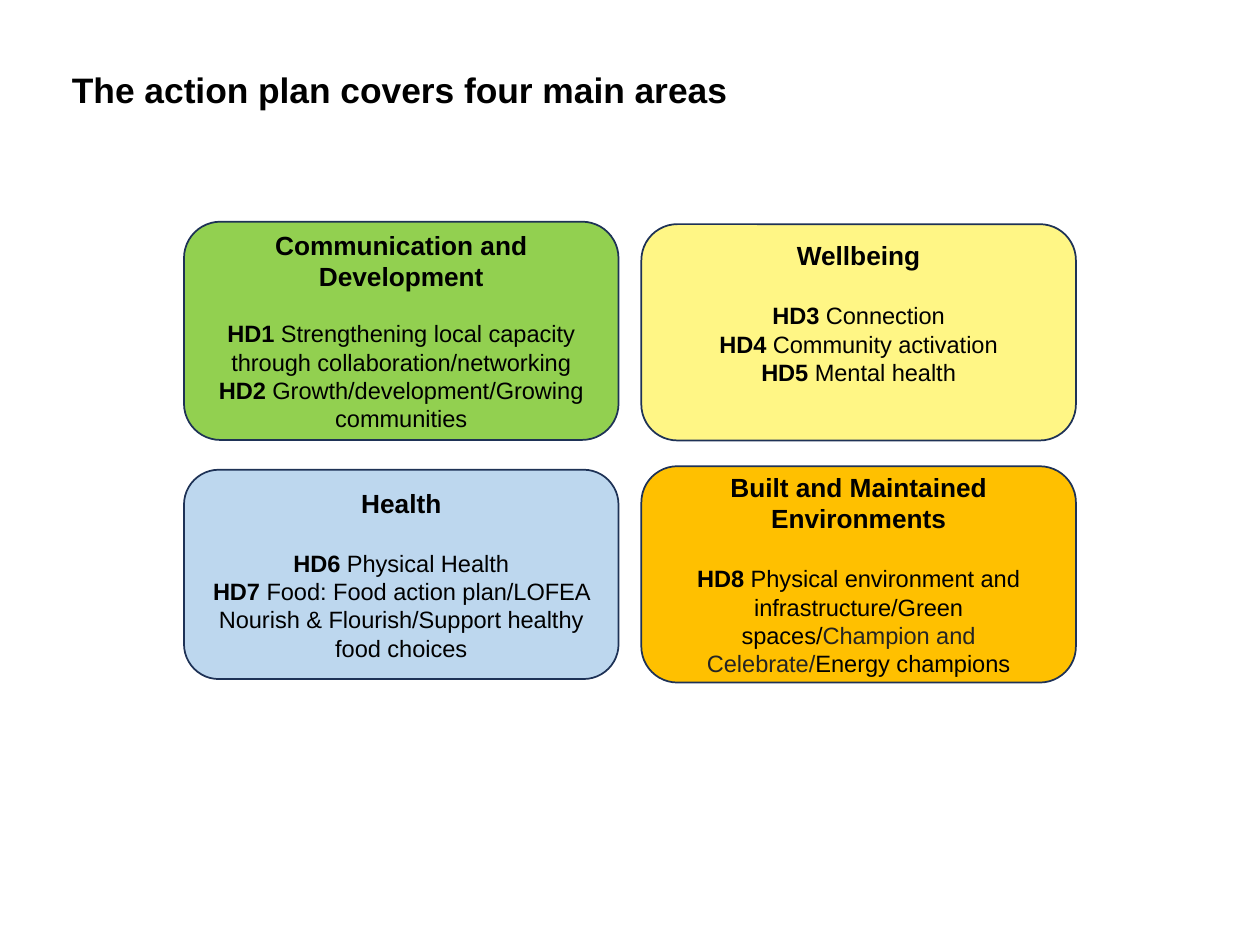
from pptx import Presentation
from pptx.dml.color import RGBColor
from pptx.enum.shapes import MSO_SHAPE as SHAPE
from pptx.enum.text import MSO_ANCHOR as ANCHOR, PP_ALIGN as ALIGN
from pptx.util import Cm, Pt


def rgb(value):
    return RGBColor.from_string(value)


def add_run(p, text, size=13.5, bold=False, color="000000", font="Arial"):
    r = p.add_run()
    r.text = text
    r.font.name = font
    r.font.size = Pt(size)
    r.font.bold = bold
    r.font.color.rgb = rgb(color)


class Deck:
    line = "1E3256"
    title_size = 20.2
    heading_size = 15

    def __init__(self, prs):
        self.s = prs.slides.add_slide(prs.slide_layouts[5])

    def frame(self, sp, anchor):
        tf = sp.text_frame
        tf.word_wrap = True
        tf.vertical_anchor = anchor
        tf.margin_left = tf.margin_right = Cm(0.18)
        tf.margin_top = tf.margin_bottom = Cm(0.1)
        return tf

    def title(self, text, left, top, width, height):
        sp = self.s.shapes.title
        sp.left, sp.top, sp.width, sp.height = map(Cm, (left, top, width, height))
        p = self.frame(sp, ANCHOR.BOTTOM).paragraphs[0]
        p.alignment = ALIGN.LEFT
        p.line_spacing = 0.9
        add_run(p, text, size=self.title_size, bold=True)

    def card(self, heading, items, fill, box, gap=17.25, anchor=ANCHOR.MIDDLE):
        sp = self.s.shapes.add_shape(SHAPE.ROUNDED_RECTANGLE, *map(Cm, box))
        sp.shadow.inherit = False
        sp.fill.solid()
        sp.fill.fore_color.rgb = rgb(fill)
        sp.line.color.rgb = rgb(self.line)
        sp.line.width = Pt(1)
        tf = self.frame(sp, anchor)
        p = tf.paragraphs[0]
        p.alignment = ALIGN.CENTER
        p.space_after = Pt(gap)
        add_run(p, heading, size=self.heading_size, bold=True)
        # Each item is a bold code followed by (text, colour) parts
        for code, *parts in items:
            p = tf.add_paragraph()
            p.alignment = ALIGN.CENTER
            add_run(p, code, bold=True)
            for text, color in parts:
                add_run(p, text, color=color)


def main():
    prs = Presentation()
    prs.slide_width, prs.slide_height = Cm(25.4), Cm(19.05)
    deck = Deck(prs)
    black, grey = "000000", "242424"
    left, right, width = 3.71, 12.93, 8.76

    deck.title("The action plan covers four main areas", 1.27, 1.07, 21.51, 1.27)

    # Upper row
    deck.card("Communication and Development", [
        ("HD1", (" Strengthening local capacity through collaboration/networking", black)),
        ("HD2", (" Growth/development/Growing communities", black)),
    ], "92D050", (left, 4.47, width, 4.4), gap=15.5)
    deck.card("Wellbeing", [
        ("HD3", (" Connection", black)),
        ("HD4", (" Community activation", black)),
        ("HD5", (" Mental health", black)),
    ], "FFF685", (right, 4.52, width, 4.36), anchor=ANCHOR.TOP)

    # Lower row
    deck.card("Health", [
        ("HD6", (" Physical Health", black)),
        ("HD7", (" Food: Food action plan/LOFEA Nourish & Flourish/Support "
                 "healthy food choices", black)),
    ], "BDD7EE", (left, 9.47, width, 4.22))
    deck.card("Built and Maintained Environments", [
        ("HD8", (" Physical environment and infrastructure/Green spaces/", black),
         ("Champion and Celebrate/", grey), ("Energy champions", black)),
    ], "FFC000", (right, 9.4, width, 4.36))

    prs.save("out.pptx")


if __name__ == "__main__":
    main()
